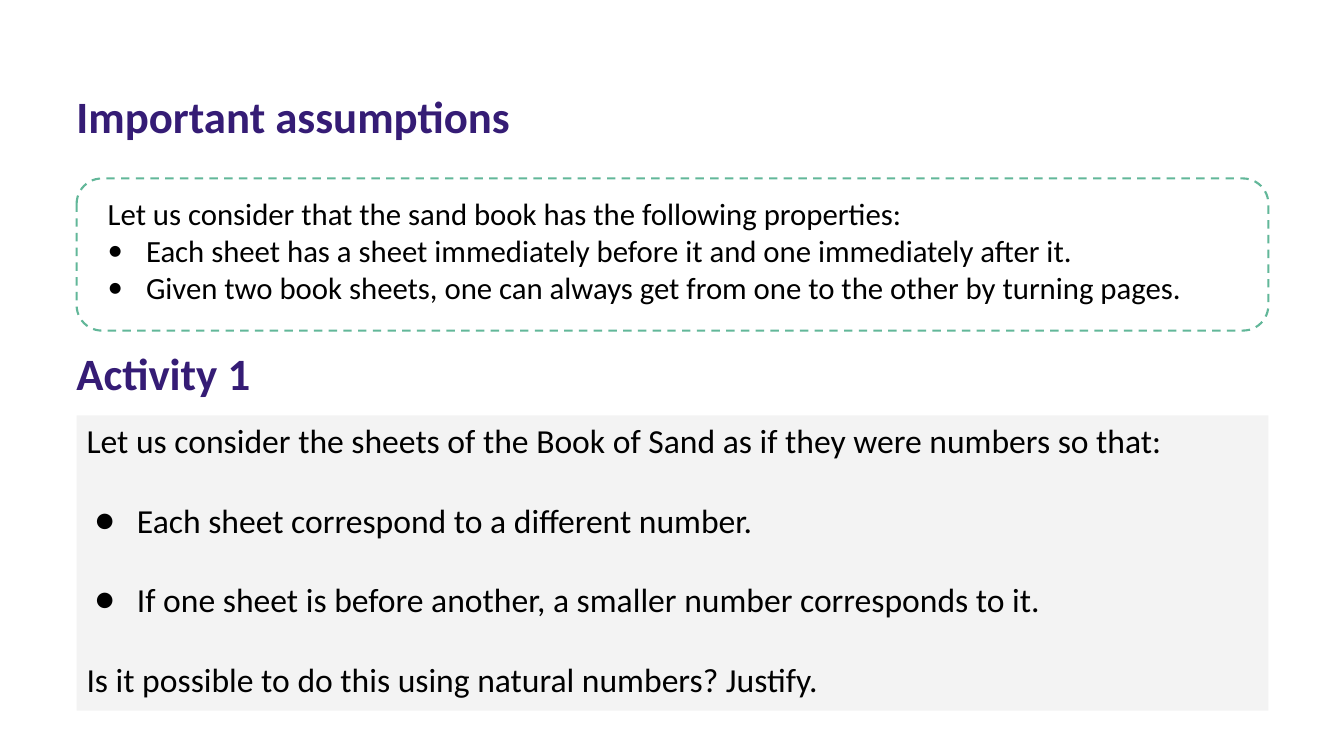
from lxml import etree
from pptx import Presentation
from pptx.dml.color import RGBColor
from pptx.enum.dml import MSO_LINE
from pptx.enum.shapes import MSO_SHAPE
from pptx.enum.text import MSO_ANCHOR, PP_ALIGN
from pptx.oxml.ns import qn
from pptx.util import Inches, Pt

RECT = MSO_SHAPE.RECTANGLE
ROUND = MSO_SHAPE.ROUNDED_RECTANGLE
DASH = MSO_LINE.DASH
TOP = MSO_ANCHOR.TOP
LEFT = PP_ALIGN.LEFT
JUSTIFY = PP_ALIGN.JUSTIFY

COLORS = {"title": "351C75", "text": "000000", "panel": "F3F3F3", "frame": "62B799"}
EDGE, WIDE = 0.76, 11.82


def color(name):
    return RGBColor.from_string(COLORS[name])


def bullet(para, mark, left, hang):
    """Give a paragraph a bullet sign and a hanging indent, in inches."""
    props = para._p.get_or_add_pPr()
    props.set("marL", str(Inches(left)))
    props.set("indent", str(-Inches(hang)))
    tint = etree.SubElement(props, qn("a:buClr"))
    etree.SubElement(tint, qn("a:srgbClr")).set("val", COLORS["text"])
    etree.SubElement(props, qn("a:buFont")).set("typeface", "Calibri")
    etree.SubElement(props, qn("a:buChar")).set("char", mark)


def write(frame, text, size=24, tint="text", bold=False, gap=0, align=LEFT, mark=None):
    """Add one paragraph; mark is (sign, left, hang)."""
    first = not frame.text
    para = frame.paragraphs[0] if first else frame.add_paragraph()
    if mark:
        bullet(para, *mark)
    para.alignment = align
    if not first:
        para.space_before = Pt(gap)
    run = para.add_run()
    run.text = text
    run.font.name = "Calibri"
    run.font.size = Pt(size)
    run.font.bold = bold
    run.font.color.rgb = color(tint)


class Page:
    def __init__(self, deck):
        self.shapes = deck.slides.add_slide(deck.slide_layouts[6]).shapes

    def box(self, *place):
        frame = self.shapes.add_textbox(*map(Inches, place)).text_frame
        frame.word_wrap = True
        return frame

    def title(self, text, top):
        write(self.box(0.66, top, 10.52, 0.64), text, size=32, tint="title", bold=True)

    def panel(self, top, high):
        """Add a filled box and return its text frame."""
        shape = self.shapes.add_shape(RECT, *map(Inches, (EDGE, top, WIDE, high)))
        shape.shadow.inherit = False
        shape.fill.solid()
        shape.fill.fore_color.rgb = color("panel")
        shape.line.fill.background()
        frame = shape.text_frame
        frame.word_wrap = True
        frame.vertical_anchor = TOP
        return frame

    def outline(self, top, high):
        shape = self.shapes.add_shape(ROUND, *map(Inches, (EDGE, top, WIDE, high)))
        shape.shadow.inherit = False
        shape.adjustments[0] = 0.167
        shape.fill.background()
        shape.line.color.rgb = color("frame")
        shape.line.width = Pt(1.5)
        shape.line.dash_style = DASH


def main():
    deck = Presentation()
    deck.slide_width, deck.slide_height = Inches(13.33), Inches(7.5)
    page = Page(deck)

    page.title("Activity 1", 3.38)
    task = page.panel(4.12, 2.93)
    dot = ("●", 0.5, 0.42)
    for text, style in (
        ("Let us consider the sheets of the Book of Sand as if they were numbers so that:", {}),
        ("Each sheet correspond to a different number.", {"mark": dot}),
        ("If one sheet is before another, a smaller number corresponds to it.", {"mark": dot}),
        ("Is it possible to do this using natural numbers? Justify.", {"align": JUSTIFY}),
    ):
        write(task, text, gap=28, **style)

    rules = page.box(0.97, 1.88, WIDE, 1.21)
    write(rules, "Let us consider that the sand book has the following properties:", size=22)
    for text in (
        "Each sheet has a sheet immediately before it and one immediately after it.",
        "Given two book sheets, one can always get from one to the other by turning pages.",
    ):
        write(rules, text, size=22, mark=("•", 0.38, 0.38))

    page.title("Important assumptions", 0.83)
    page.outline(1.77, 1.51)
    deck.save("out.pptx")


if __name__ == "__main__":
    main()
